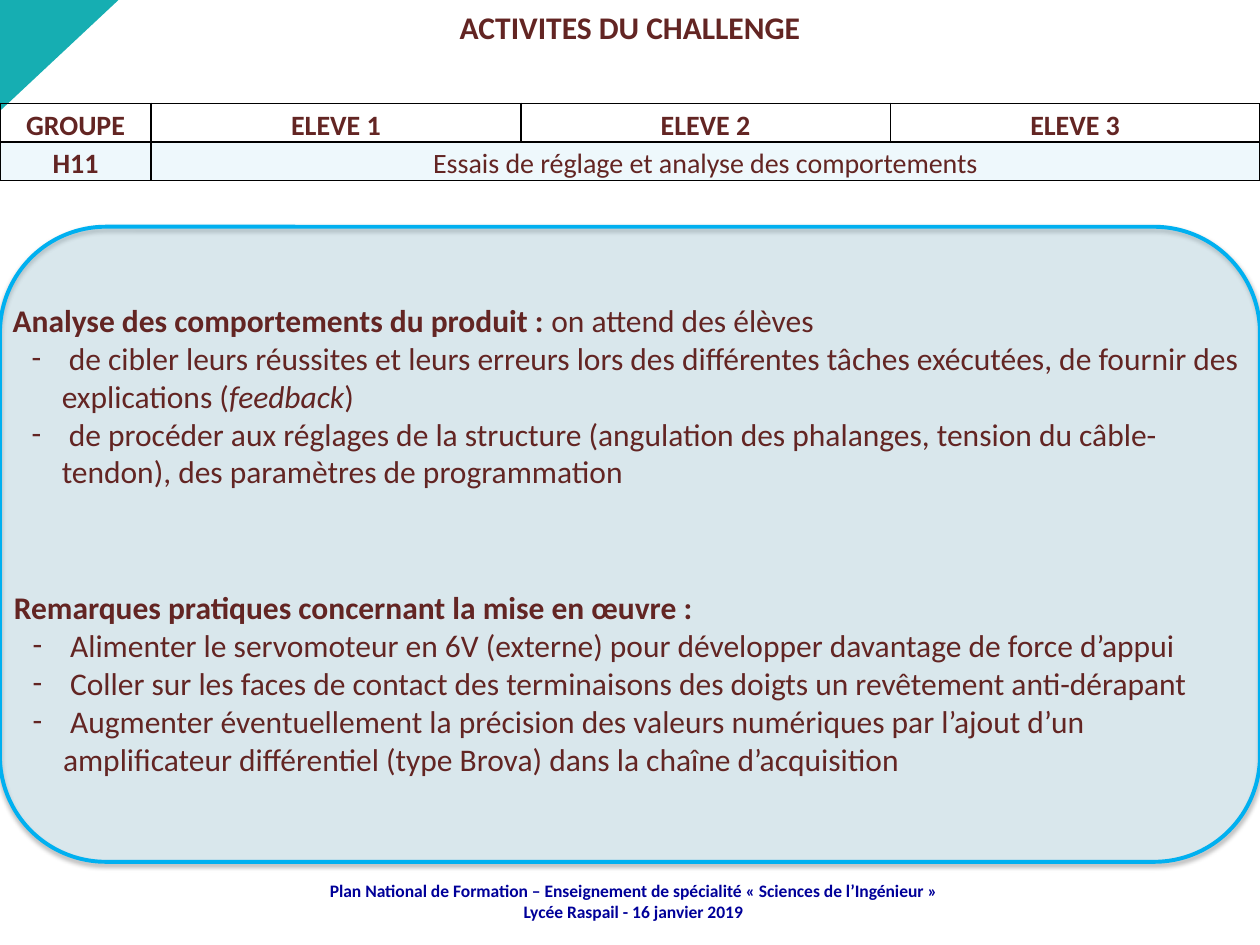
from lxml.etree import SubElement
from pptx import Presentation
from pptx.dml.color import RGBColor
from pptx.enum.shapes import MSO_SHAPE as Preset
from pptx.enum.text import MSO_ANCHOR as Anchor, MSO_AUTO_SIZE as Fit, PP_ALIGN as Align
from pptx.oxml import parse_xml
from pptx.oxml.ns import nsdecls, qn
from pptx.util import Inches, Pt

COLORS = {
    "teal": "16AEB2",
    "navy": "000099",
    "brown": "632523",
    "sky": "8AD0EA",
    "outline": "00B0F0",
    "black": "000000",
}
COLUMNS, ROWS = 100, 75


class Board:
    font = "Calibri"

    def __init__(self, deck, layout):
        self.slide = deck.slides.add_slide(deck.slide_layouts[layout])
        self.column = deck.slide_width / COLUMNS
        self.row = deck.slide_height / ROWS

    def box(self, left, top, width, height):
        return (round(left * self.column), round(top * self.row),
                round(width * self.column), round(height * self.row))

    def add_runs(self, paragraph, pieces, size, color="brown", align=Align.LEFT):
        paragraph.alignment = align
        paragraph.space_before = Pt(0)
        for text, look in pieces:
            run = paragraph.add_run()
            run.text = text
            run.font.name = self.font
            run.font.size = Pt(size)
            run.font.bold = "b" in look
            run.font.italic = "i" in look
            run.font.color.rgb = RGBColor.from_string(COLORS[color])

    def tint(self, fill, color, alpha=100):
        fill.solid()
        fill.fore_color.rgb = RGBColor.from_string(COLORS[color])
        if alpha < 100:
            tone = fill._xPr.find(qn("a:solidFill"))[0]
            SubElement(tone, qn("a:alpha"), val=str(alpha * 1000))

    def shape(self, preset, area, color, alpha=100):
        item = self.slide.shapes.add_shape(preset, *self.box(*area))
        item.shadow.inherit = False
        item.line.fill.background()
        self.tint(item.fill, color, alpha)
        return item

    def corner(self, area):
        item = self.shape(Preset.ISOSCELES_TRIANGLE, area, "teal")
        item.adjustments[0] = 1
        item.rotation = 180

    def panel(self, area):
        item = self.shape(Preset.ROUNDED_RECTANGLE, area, "sky", 20)
        item.line.color.rgb = RGBColor.from_string(COLORS["outline"])
        item.line.width = Pt(2.25)
        effects = item._element.spPr.find(qn("a:effectLst"))
        effects.append(parse_xml(
            f'<a:outerShdw {nsdecls("a")} blurRad="{Pt(3.1)}" dist="{Pt(1.8)}" '
            f'dir="5400000" rotWithShape="0"><a:srgbClr val="{COLORS["black"]}">'
            '<a:alpha val="35000"/></a:srgbClr></a:outerShdw>'))

    def placeholder(self, index, area):
        holder = self.slide.placeholders[index]
        holder.left, holder.top, holder.width, holder.height = self.box(*area)
        self.slide.shapes._spTree.append(holder._element)
        frame = holder.text_frame
        frame.word_wrap = True
        frame.auto_size = Fit.NONE
        frame.vertical_anchor = Anchor.TOP
        return frame

    def title(self, text, area):
        frame = self.placeholder(0, area)
        self.add_runs(frame.paragraphs[0], [(text, "b")], 18, align=Align.CENTER)

    def listing(self, index, area, heading, items):
        frame = self.placeholder(index, area)
        for number, pieces in enumerate([heading, *items]):
            paragraph = frame.add_paragraph() if number else frame.paragraphs[0]
            props = paragraph._p.get_or_add_pPr()
            props.set("marL", str(Inches(0.39) if number else 0))
            props.set("indent", str(Inches(-0.24) if number else 0))
            if number:
                SubElement(props, qn("a:buFont"), typeface=self.font)
                SubElement(props, qn("a:buChar"), char="-")
            else:
                SubElement(props, qn("a:buNone"))
            self.add_runs(paragraph, pieces, 18)

    def footer(self, lines, area):
        frame = self.slide.shapes.add_textbox(*self.box(*area)).text_frame
        frame.word_wrap = True
        frame.vertical_anchor = Anchor.MIDDLE
        frame.margin_left = frame.margin_right = frame.margin_top = frame.margin_bottom = 0
        for number, line in enumerate(lines):
            paragraph = frame.add_paragraph() if number else frame.paragraphs[0]
            self.add_runs(paragraph, [(line, "b")], 10, "navy", Align.CENTER)

    def border(self, cell):
        props = cell._tc.get_or_add_tcPr()
        for place, side in enumerate(("lnL", "lnR", "lnT", "lnB")):
            props.insert(place, parse_xml(
                f'<a:{side} {nsdecls("a")} w="{Pt(1)}"><a:solidFill>'
                f'<a:srgbClr val="{COLORS["black"]}"/></a:solidFill></a:{side}>'))

    def table(self, area, widths, header, group, activity):
        table = self.slide.shapes.add_table(2, len(widths), *self.box(*area)).table
        table.first_row = table.horz_banding = False
        for column, width in zip(table.columns, widths):
            column.width = round(width * self.column)
        table.cell(1, 1).merge(table.cell(1, len(widths) - 1))
        texts = [[(name, "b") for name in header], [(group, "b"), (activity, "")]]
        for row, pieces in enumerate(texts):
            for column in range(len(widths)):
                cell = table.cell(row, column)
                cell.margin_left = cell.margin_right = Inches(0.06)
                cell.margin_top = cell.margin_bottom = 0
                if row:
                    self.tint(cell.fill, "sky", 14)
                else:
                    cell.fill.background()
                self.border(cell)
                paragraph = cell.text_frame.paragraphs[0]
                paragraph.line_spacing = 1.15
                self.add_runs(paragraph, pieces[column:column + 1], 16, align=Align.CENTER)


def main():
    deck = Presentation()
    deck.slide_width, deck.slide_height = Inches(10), Inches(7.5)
    board = Board(deck, 3)
    board.corner((0, 0, 9.4, 8.8))
    board.footer([
        "Plan National de Formation – Enseignement de spécialité « Sciences de l’Ingénieur »",
        "Lycée Raspail - 16 janvier 2019",
    ], (23.8, 69.8, 52.9, 3.4))
    group_width = 12
    pupils = 3
    pupil_width = (COLUMNS - group_width) / pupils
    board.table(
        (0, 8.2, COLUMNS, 6.1),
        [group_width] + [pupil_width] * pupils,
        ["GROUPE"] + [f"ELEVE {number + 1}" for number in range(pupils)],
        "H11",
        "Essais de réglage et analyse des comportements",
    )
    board.title("ACTIVITES DU CHALLENGE", (0, 0.1, COLUMNS, 4))
    board.panel((0, 18, COLUMNS, 50.4))
    board.listing(
        2, (0.1, 46.2, COLUMNS, 18.8),
        [("Remarques pratiques concernant la mise en œuvre :", "b")],
        [
            [(" Alimenter le servomoteur en 6V (externe) pour développer davantage de force d’appui", "")],
            [(" Coller sur les faces de contact des terminaisons des doigts un revêtement anti-dérapant", "")],
            [(" Augmenter éventuellement la précision des valeurs numériques par l’ajout d’un "
              "amplificateur différentiel (type Brova) dans la chaîne d’acquisition", "")],
        ],
    )
    board.listing(
        1, (0, 23.4, COLUMNS, 16.2),
        [("Analyse des comportements du produit : ", "b"), ("on attend des élèves", "")],
        [
            [(" de cibler leurs réussites et leurs erreurs lors des différentes tâches exécutées, "
              "de fournir des explications (", ""), ("feedback", "i"), (")", "")],
            [(" de procéder aux réglages de la structure (angulation des phalanges, tension du "
              "câble-tendon), des paramètres de programmation", "")],
        ],
    )
    deck.save("out.pptx")


if __name__ == "__main__":
    main()
